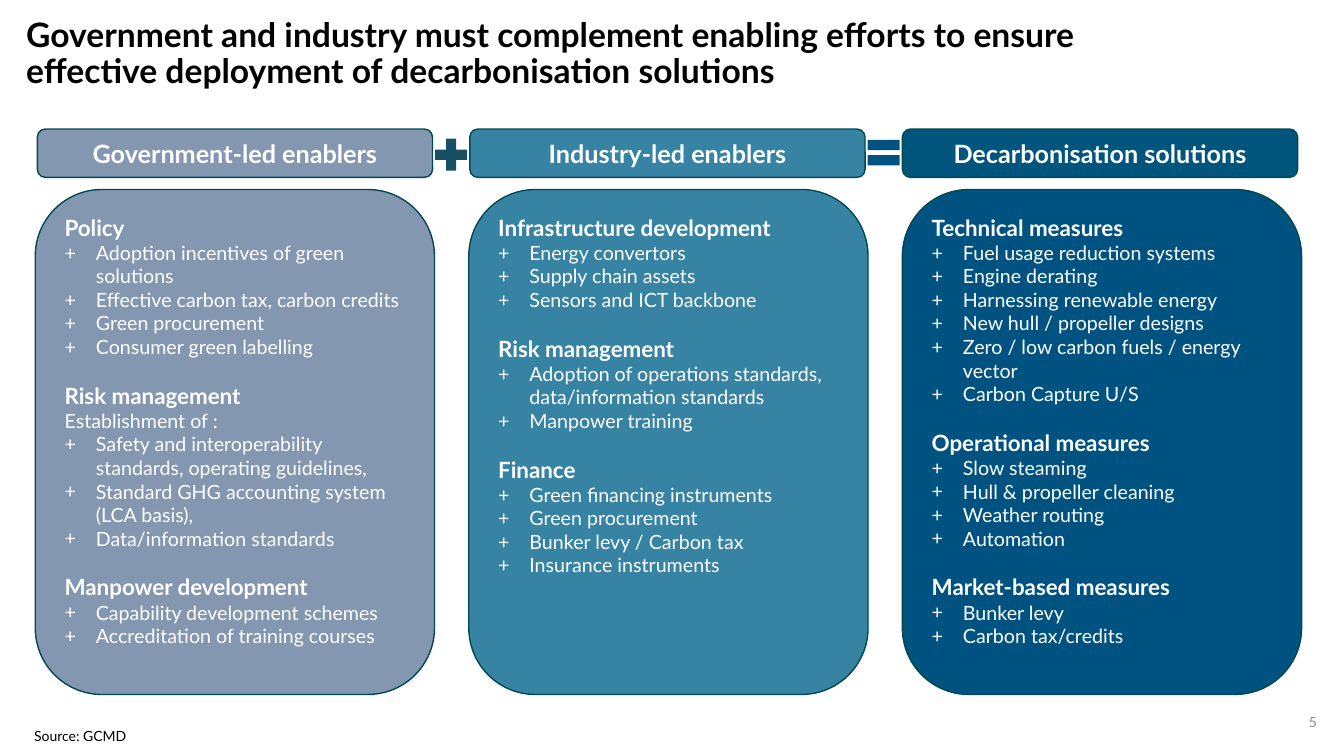
from lxml.etree import SubElement
from pptx import Presentation
from pptx.dml.color import RGBColor
from pptx.enum.shapes import MSO_SHAPE as Shape
from pptx.enum.text import MSO_ANCHOR as Anchor, MSO_AUTO_SIZE as AutoSize, PP_ALIGN as Align
from pptx.oxml.ns import qn
from pptx.util import Inches, Pt

TITLE = ("Government and industry must complement enabling efforts to ensure "
         "effective deployment of decarbonisation solutions")
SOURCE = "Source: GCMD"
PAGE_NUMBER = "5"
BULLET = "+"
COLUMNS = [
    ("Government-led enablers", "government", "government", [
        ("Policy", "", [
            "Adoption incentives of green solutions",
            "Effective carbon tax, carbon credits",
            "Green procurement",
            "Consumer green labelling"]),
        ("Risk management", "Establishment of :", [
            "Safety and interoperability standards, operating guidelines,",
            "Standard GHG accounting system (LCA basis),",
            "Data/information standards"]),
        ("Manpower development", "", [
            "Capability development schemes",
            "Accreditation of training courses"]),
    ]),
    ("Industry-led enablers", "industry", "industry", [
        ("Infrastructure development", "", [
            "Energy convertors",
            "Supply chain assets",
            "Sensors and ICT backbone"]),
        ("Risk management", "", [
            "Adoption of operations standards, data/information standards",
            "Manpower training"]),
        ("Finance", "", [
            "Green financing instruments",
            "Green procurement",
            "Bunker levy / Carbon tax",
            "Insurance instruments"]),
    ]),
    ("Decarbonisation solutions", "solution_header", "solution", [
        ("Technical measures", "", [
            "Fuel usage reduction systems",
            "Engine derating",
            "Harnessing renewable energy",
            "New hull / propeller designs",
            "Zero / low carbon fuels / energy vector",
            "Carbon Capture U/S"]),
        ("Operational measures", "", [
            "Slow steaming",
            "Hull & propeller cleaning",
            "Weather routing",
            "Automation"]),
        ("Market-based measures", "", [
            "Bunker levy",
            "Carbon tax/credits"]),
    ]),
]
OPERATORS = [
    (Shape.MATH_PLUS, "plus", 1.32),
    (Shape.MATH_EQUAL, "solution", 1.3),
]
COLORS = {
    "government": "8497B0",
    "industry": "3783A3",
    "solution": "005381",
    "solution_header": "00557C",
    "plus": "175064",
    "outline": "004950",
    "white": "FFFFFF",
    "black": "000000",
    "grey": "8C8C8C",
}
FONT = "Lato"
SLIDE_SIZE = (13.33, 7.5)
CARD_LEFT, CARD_TOP, CARD_WIDTH, CARD_HEIGHT, CARD_PITCH = 0.35, 1.88, 3.96, 5.01, 4.3
HEADER_LEFT, HEADER_TOP, HEADER_WIDTH, HEADER_HEIGHT, HEADER_PITCH = 0.37, 1.28, 3.92, 0.48, 4.29
OPERATOR_SIZE = 0.43
INDENT = 0.31
GROUP_GAP = 16.8


def color(name):
    return RGBColor.from_string(COLORS[name])


def place(left, top, width, height):
    return [Inches(value) for value in (left, top, width, height)]


def style(para, size, tint, bold=False, align=Align.LEFT):
    para.alignment = align
    for span in para.runs:
        span.font.name = FONT
        span.font.size = Pt(size)
        span.font.bold = bold
        span.font.color.rgb = color(tint)


def add_block(page, kind, area, fill, outlined=True):
    block = page.shapes.add_shape(kind, *place(*area))
    block.shadow.inherit = False
    block.fill.solid()
    block.fill.fore_color.rgb = color(fill)
    if outlined:
        block.line.color.rgb = color("outline")
        block.line.width = Pt(1)
    else:
        block.line.fill.background()
    return block


def add_label(page, area, text, size, tint, align, wrap):
    box = page.shapes.add_textbox(*place(*area))
    frame = box.text_frame
    frame.word_wrap = wrap
    frame.vertical_anchor = Anchor.MIDDLE
    frame.text = text
    style(frame.paragraphs[0], size, tint, align=align)


def set_bullet(para):
    properties = para._p.get_or_add_pPr()
    properties.set("marL", str(Inches(INDENT)))
    properties.set("indent", str(-Inches(INDENT)))
    SubElement(properties, qn("a:buFont")).set("typeface", FONT)
    SubElement(properties, qn("a:buChar")).set("char", BULLET)


def fill_card(frame, groups):
    frame.word_wrap = True
    frame.vertical_anchor = Anchor.TOP
    lines = []
    for heading, intro, items in groups:
        lines.append((heading, "heading"))
        if intro:
            lines.append((intro, "intro"))
        lines += [(item, "bullet") for item in items]
    frame.text = "\n".join(text for text, role in lines)
    for index, (para, (text, role)) in enumerate(zip(frame.paragraphs, lines)):
        is_heading = role == "heading"
        if role == "bullet":
            set_bullet(para)
        if is_heading and index:
            para.space_before = Pt(GROUP_GAP)
        style(para, 16 if is_heading else 14, "white", is_heading)


def add_title(page):
    title = page.shapes.title
    title.left, title.top, title.width, title.height = place(0.16, 0.05, 11.5, 0.99)
    frame = title.text_frame
    frame.text = TITLE
    frame.word_wrap = True
    frame.auto_size = AutoSize.NONE
    frame.vertical_anchor = Anchor.MIDDLE
    para = frame.paragraphs[0]
    para.line_spacing = 0.9
    style(para, 24, "black", True)


def main():
    deck = Presentation()
    deck.slide_width, deck.slide_height = [Inches(side) for side in SLIDE_SIZE]
    page = deck.slides.add_slide(deck.slide_layouts[5])
    add_title(page)

    for index, (name, header_fill, card_fill, groups) in enumerate(COLUMNS):
        card_area = (CARD_LEFT + index * CARD_PITCH, CARD_TOP, CARD_WIDTH, CARD_HEIGHT)
        card = add_block(page, Shape.ROUNDED_RECTANGLE, card_area, card_fill)
        fill_card(card.text_frame, groups)

        header_area = (HEADER_LEFT + index * HEADER_PITCH, HEADER_TOP, HEADER_WIDTH, HEADER_HEIGHT)
        header = add_block(page, Shape.ROUNDED_RECTANGLE, header_area, header_fill)
        header.text_frame.text = name
        header.text_frame.vertical_anchor = Anchor.MIDDLE
        style(header.text_frame.paragraphs[0], 18, "white", True, Align.CENTER)

    gap_center = HEADER_LEFT + (HEADER_WIDTH + HEADER_PITCH) / 2
    for index, (kind, fill, top) in enumerate(OPERATORS):
        left = gap_center + index * HEADER_PITCH - OPERATOR_SIZE / 2
        add_block(page, kind, (left, top, OPERATOR_SIZE, OPERATOR_SIZE), fill, outlined=False)

    add_label(page, (0.24, 7.17, 1.15, 0.27), SOURCE, 10, "black", Align.LEFT, False)
    add_label(page, (10.16, 6.96, 3, 0.4), PAGE_NUMBER, 10, "grey", Align.RIGHT, True)
    deck.save("out.pptx")


if __name__ == "__main__":
    main()
